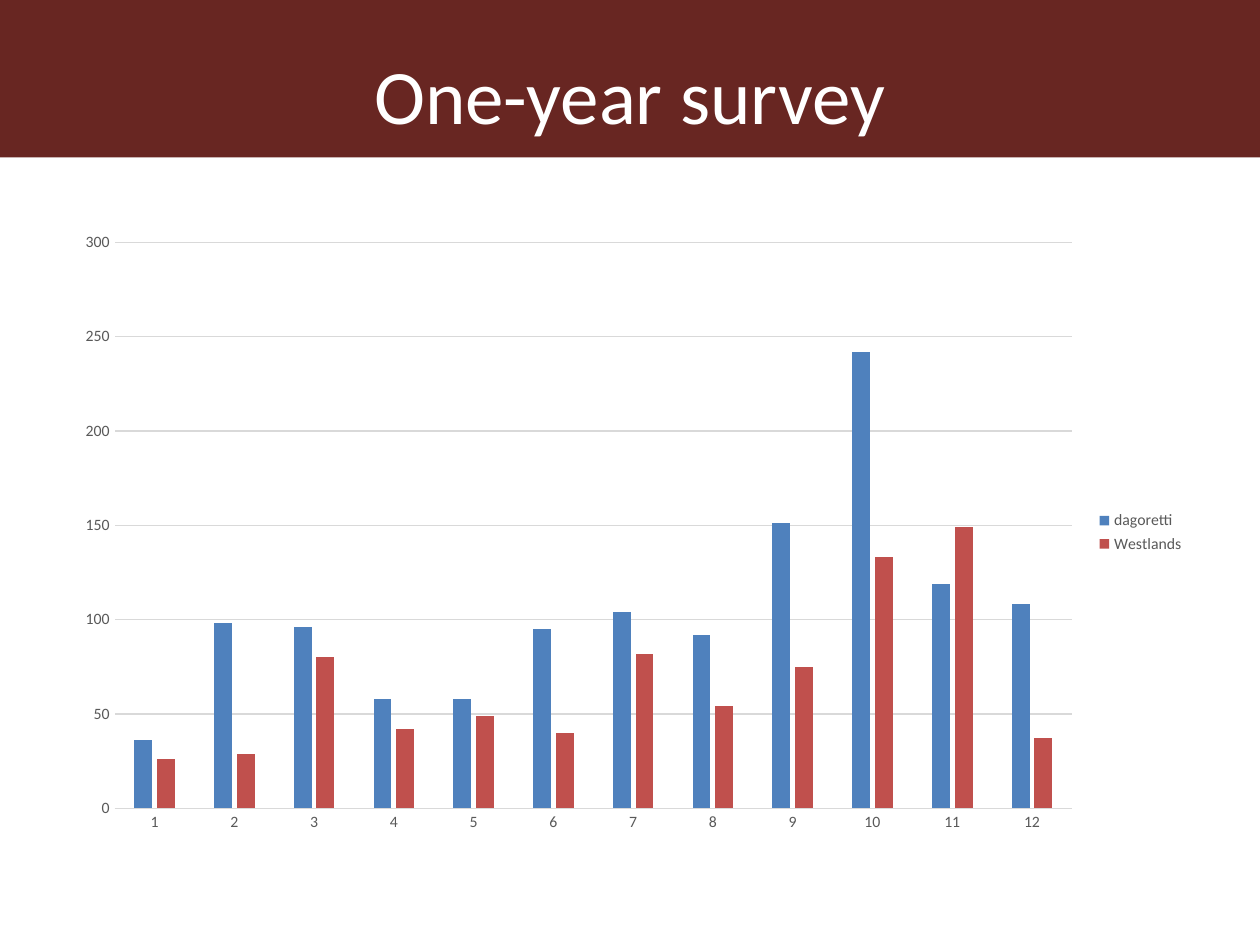
from pptx import Presentation
from pptx.chart.data import CategoryChartData
from pptx.dml.color import RGBColor
from pptx.enum.chart import XL_CHART_TYPE as ChartType, XL_LEGEND_POSITION as LegendPosition
from pptx.enum.chart import XL_TICK_MARK as TickMark
from pptx.enum.shapes import MSO_SHAPE as ShapeType
from pptx.enum.text import MSO_ANCHOR as Anchor, PP_ALIGN as Align
from pptx.util import Inches, Pt

COLORS = {
    "band": "682622",
    "title": "FFFFFF",
    "label": "595959",
    "grid": "D9D9D9",
    "dagoretti": "4F81BD",
    "Westlands": "C0504D",
}
MONTHS = [str(month) for month in range(1, 13)]
SURVEY = {
    "dagoretti": (36, 98, 96, 58, 58, 95, 104, 92, 151, 242, 119, 108),
    "Westlands": (26, 29, 80, 42, 49, 40, 82, 54, 75, 133, 149, 37),
}


class SlideBuilder:
    font_name = "Calibri"

    def __init__(self, slide):
        self.slide = slide

    def color(self, name):
        return RGBColor.from_string(COLORS[name])

    def set_font(self, font, size, color):
        font.name = self.font_name
        font.size = Pt(size)
        font.color.rgb = self.color(color)

    def set_line(self, line, color):
        line.color.rgb = self.color(color)
        line.width = Pt(0.75)

    def band(self, left, top, width, height):
        shape = self.slide.shapes.add_shape(
            ShapeType.RECTANGLE, Inches(left), Inches(top), Inches(width), Inches(height))
        shape.shadow.inherit = False
        shape.fill.solid()
        shape.fill.fore_color.rgb = self.color("band")
        shape.line.fill.background()

    def title(self, text, left, top, width, height):
        box = self.slide.shapes.add_textbox(
            Inches(left), Inches(top), Inches(width), Inches(height))
        frame = box.text_frame
        frame.word_wrap = True
        frame.vertical_anchor = Anchor.TOP
        frame.margin_top = Inches(0.08)
        paragraph = frame.paragraphs[0]
        paragraph.text = text
        paragraph.alignment = Align.CENTER
        self.set_font(paragraph.font, 44, "title")

    def column_chart(self, categories, series_values, left, top, width, height):
        data = CategoryChartData()
        data.categories = categories
        for name, values in series_values.items():
            data.add_series(name, values)
        chart = self.slide.shapes.add_chart(
            ChartType.COLUMN_CLUSTERED, Inches(left), Inches(top),
            Inches(width), Inches(height), data).chart
        self.set_font(chart.font, 9, "label")
        chart.has_title = False

        chart.has_legend = True
        chart.legend.position = LegendPosition.RIGHT
        chart.legend.include_in_layout = False
        self.set_font(chart.legend.font, 9, "label")

        plot = chart.plots[0]
        plot.gap_width = 219
        plot.overlap = -27
        plot.vary_by_categories = False
        for series in plot.series:
            series.format.fill.solid()
            series.format.fill.fore_color.rgb = self.color(series.name)

        for axis in (chart.category_axis, chart.value_axis):
            axis.major_tick_mark = axis.minor_tick_mark = TickMark.NONE
            self.set_font(axis.tick_labels.font, 9, "label")
        self.set_line(chart.category_axis.format.line, "grid")
        value_axis = chart.value_axis
        value_axis.minimum_scale = 0
        value_axis.maximum_scale = 300
        value_axis.major_unit = 50
        value_axis.format.line.fill.background()
        self.set_line(value_axis.major_gridlines.format.line, "grid")


def main():
    presentation = Presentation()
    presentation.slide_width = Inches(10)
    presentation.slide_height = Inches(7.5)
    builder = SlideBuilder(presentation.slides.add_slide(presentation.slide_layouts[6]))
    builder.band(0, 0, 10, 1.25)
    builder.title("One-year survey", 0.5, 0.3, 9, 1.25)
    builder.column_chart(MONTHS, SURVEY, 0.5, 1.75, 9, 4.95)
    presentation.save("out.pptx")


if __name__ == "__main__":
    main()
